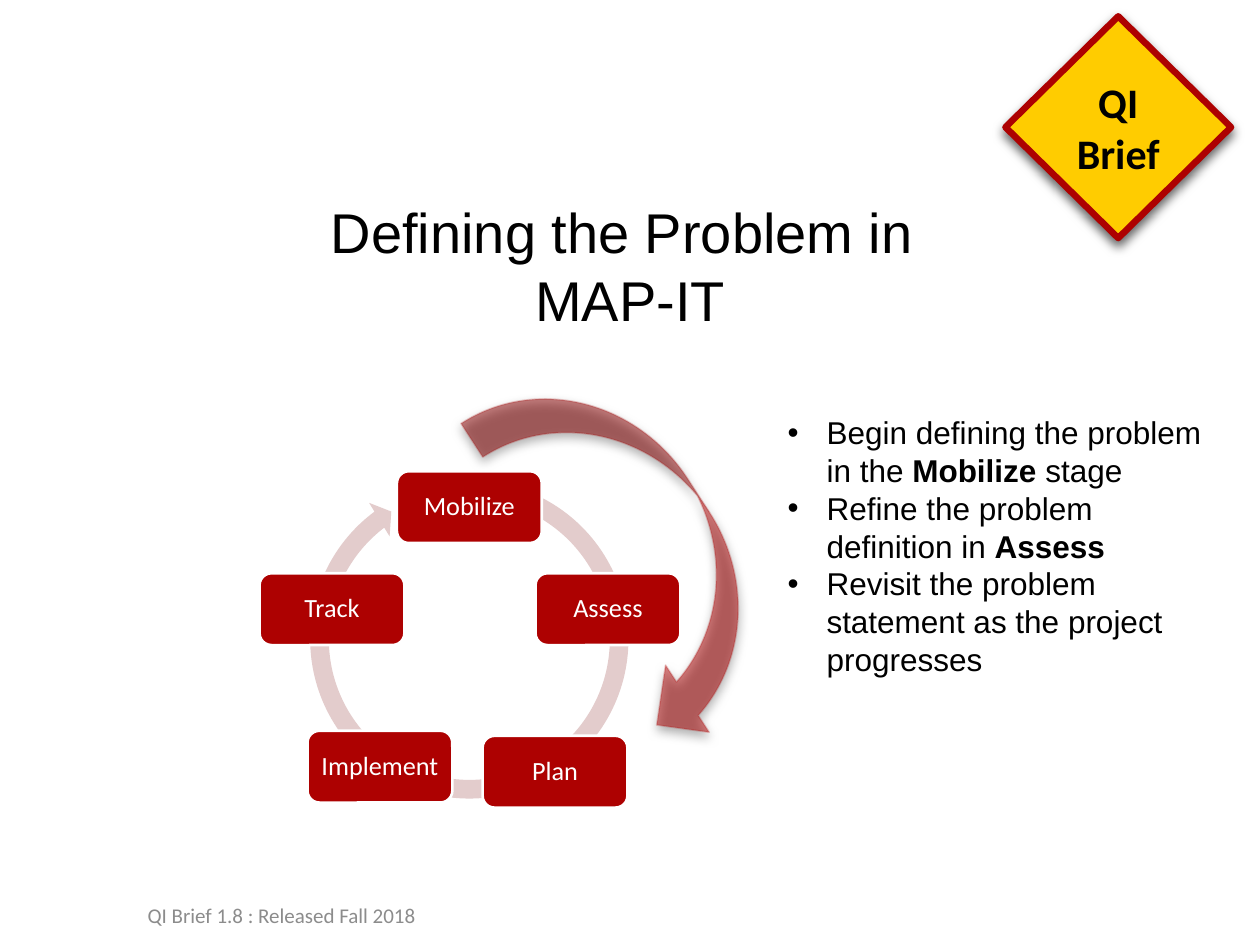
import pptx
import pptx.util
import pptx.dml.color
import pptx.enum.shapes
import pptx.enum.text
import pptx.oxml
import pptx.oxml.ns
from pptx.util import Inches

COLORS = {
    "red": "AD0101",
    "pale red": "E3CCCC",
    "yellow": "FFCC00",
    "white": "FFFFFF",
    "black": "000000",
    "gray": "8C8C8C",
}
SHAPES = pptx.enum.shapes.MSO_SHAPE
ALIGN = pptx.enum.text.PP_ALIGN
MIDDLE = pptx.enum.text.MSO_ANCHOR.MIDDLE
NS = pptx.oxml.ns.nsdecls("a")
SHADOW = (
    f'<a:outerShdw {NS} blurRad="76200" dist="38100" dir="5400000" rotWithShape="0">'
    '<a:srgbClr val="000000"><a:alpha val="60000"/></a:srgbClr></a:outerShdw>'
)


def add_figure(preset, box, fill, line=None, line_width=1, shadow=False):
    figure = slide.shapes.add_shape(preset, *map(Inches, box))
    figure.fill.solid()
    figure.fill.fore_color.rgb = pptx.dml.color.RGBColor.from_string(COLORS[fill])
    if line:
        figure.line.color.rgb = pptx.dml.color.RGBColor.from_string(COLORS[line])
        figure.line.width = pptx.util.Pt(line_width)
    else:
        figure.line.fill.background()
    figure.shadow.inherit = False
    if shadow:
        effects = figure._element.spPr.find(pptx.oxml.ns.qn("a:effectLst"))
        effects.append(pptx.oxml.parse_xml(SHADOW))
    return figure


def style(paragraph, name, size, color, align, bold=None):
    paragraph.alignment = align
    paragraph.font.name = name
    paragraph.font.size = pptx.util.Pt(size)
    paragraph.font.bold = bold
    paragraph.font.color.rgb = pptx.dml.color.RGBColor.from_string(COLORS[color])


deck = pptx.Presentation()
deck.slide_width, deck.slide_height = Inches(10), Inches(7.5)
slide = deck.slides.add_slide(deck.slide_layouts[1])

# Badge in the corner
badge = add_figure(SHAPES.FLOWCHART_DECISION, (7.98, 0.13, 1.79, 1.76),
                   "yellow", "red", 3.75, shadow=True)
badge.text_frame.text = "QI Brief"
badge.text_frame.vertical_anchor = MIDDLE
style(badge.text_frame.paragraphs[0], "Calibri", 24, "black", ALIGN.CENTER, True)

# Title
title = slide.shapes.title
title.left, title.top, title.width, title.height = map(Inches, (0.5, 1.48, 9, 1.25))
title.text_frame.text = "Defining the Problem in \vMAP-IT"
title.text_frame.vertical_anchor = MIDDLE
style(title.text_frame.paragraphs[0], "Arial", 32, "black", ALIGN.CENTER)

# MAP-IT cycle: ring, then the stages on it
ring = add_figure(SHAPES.CIRCULAR_ARROW, (2.38, 3.73, 2.69, 2.69), "pale red")
for index, value in enumerate((0.055, 3.307, 139.858, 172.595, 0.058)):
    ring.adjustments[index] = value

stages = [
    ("Mobilize", 3.15, 3.74),
    ("Assess", 4.25, 4.55),
    ("Plan", 3.83, 5.84),
    ("Implement", 2.44, 5.8),
    ("Track", 2.06, 4.55),
]
for name, left, top in stages:
    stage = add_figure(SHAPES.ROUNDED_RECTANGLE, (left, top, 1.15, 0.57),
                       "red", "white", 1.5)
    frame = stage.text_frame
    frame.text = name
    frame.vertical_anchor = MIDDLE
    frame.margin_left = frame.margin_right = Inches(0.08)
    frame.margin_top = frame.margin_bottom = Inches(0.08)
    frame.paragraphs[0].line_spacing = 0.9
    style(frame.paragraphs[0], "Calibri", 15, "white", ALIGN.CENTER)

# Release line
release = slide.shapes.add_textbox(*map(Inches, (0.64, 7.06, 3.19, 0.4)))
release.text_frame.word_wrap = True
release.text_frame.vertical_anchor = MIDDLE
release.text_frame.text = "QI Brief 1.8 : Released Fall 2018"
style(release.text_frame.paragraphs[0], "Calibri", 12, "gray", ALIGN.CENTER)

# Translucent arrow from Mobilize to Plan
sweep = add_figure(SHAPES.CURVED_LEFT_ARROW, (4.42, 2.76, 1.27, 3.17),
                   "red", "red", 1, shadow=True)
sweep.rotation = 327
sweep_colors = sweep._element.spPr.findall(".//" + pptx.oxml.ns.qn("a:srgbClr"))
for color, opacity in zip(sweep_colors, (50000, 20000)):
    color.append(pptx.oxml.parse_xml(f'<a:alpha {NS} val="{opacity}"/>'))

# Advice list, with the stage names in bold
advice = slide.placeholders[1]
advice.left, advice.top, advice.width, advice.height = map(Inches, (6.15, 3.23, 3.65, 2.22))
advice.text_frame.auto_size = pptx.enum.text.MSO_AUTO_SIZE.SHAPE_TO_FIT_TEXT
points = [
    ("Begin defining the problem in the ", "Mobilize", " stage"),
    ("Refine the problem definition in ", "Assess"),
    ("Revisit the problem statement as the project progresses",),
]
for index, parts in enumerate(points):
    point = advice.text_frame.paragraphs[0] if index == 0 else advice.text_frame.add_paragraph()
    properties = point._p.get_or_add_pPr()
    properties.set("marL", str(Inches(0.31)))
    properties.set("indent", str(Inches(-0.31)))
    properties.append(pptx.oxml.parse_xml(f'<a:buFont {NS} typeface="Arial"/>'))
    properties.append(pptx.oxml.parse_xml(f'<a:buChar {NS} char="•"/>'))
    point.space_before = pptx.util.Pt(0)
    style(point, "Arial", 18, "black", ALIGN.LEFT)
    for position, words in enumerate(parts):
        run = point.add_run()
        run.text = words
        if position == 1:
            run.font.bold = True

deck.save("out.pptx")
